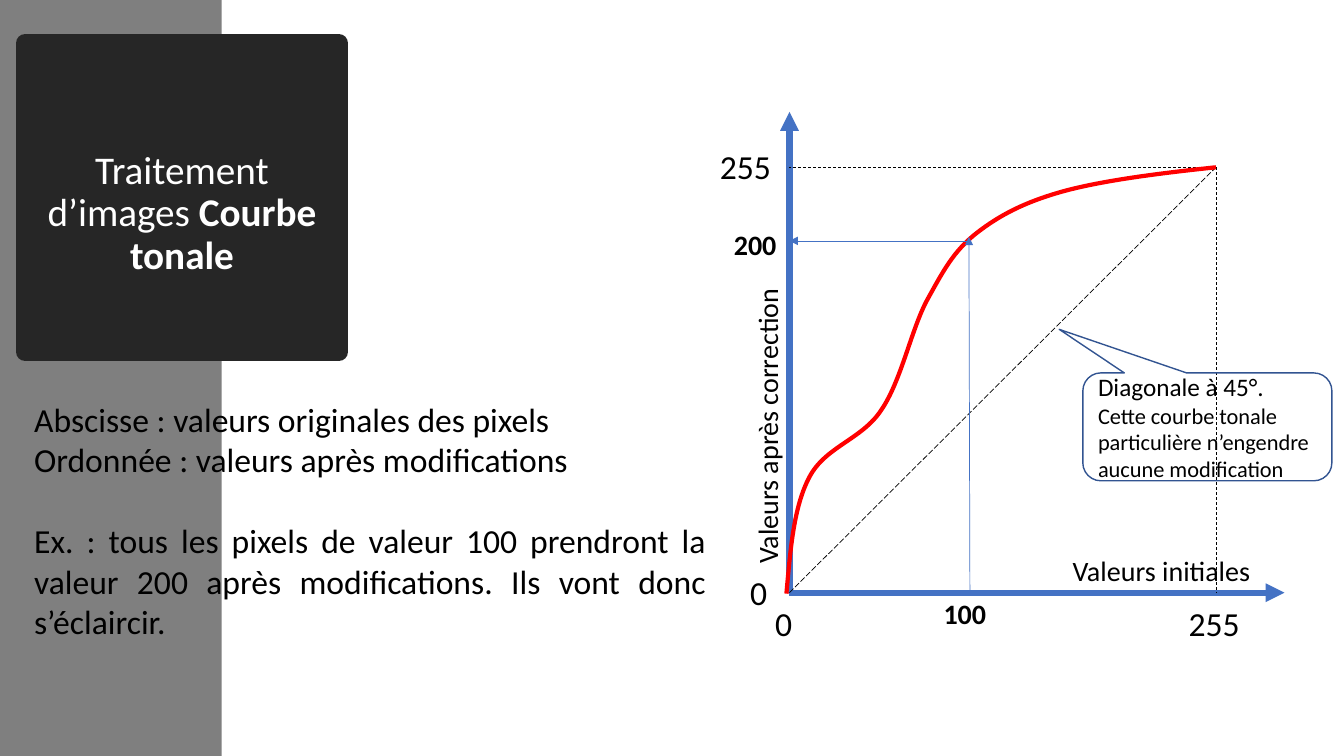
from pptx import Presentation
from pptx.util import Inches, Pt
from pptx.dml.color import RGBColor
from pptx.enum.dml import MSO_LINE as Dash
from pptx.enum.shapes import MSO_SHAPE as Shape, MSO_CONNECTOR as Link
from pptx.enum.text import PP_ALIGN as Align, MSO_ANCHOR as Anchor, MSO_AUTO_SIZE as Fit
from pptx.oxml.ns import qn
from lxml.etree import SubElement

BLACK = RGBColor(0, 0, 0)
WHITE = RGBColor(255, 255, 255)
GREY = RGBColor(0x7F, 0x7F, 0x7F)
DARK = RGBColor(0x26, 0x26, 0x26)
BLUE = RGBColor(0x44, 0x72, 0xC4)
NAVY = RGBColor(0x32, 0x54, 0x91)
RED = RGBColor(255, 0, 0)
FONT = "Calibri"

# Content
TITLE = [("Traitement d’images ", False), ("Courbe tonale", True)]
BODY = [  # text, space before in points
    ("Abscisse : valeurs originales des pixels", 0),
    ("Ordonnée : valeurs après modifications", 0),
    ("Ex. : tous les pixels de valeur 100 prendront la valeur 200 après "
     "modifications. Ils vont donc s’éclaircir.", 29),
]
NOTE = [("Diagonale à 45°.", 18),
        ("Cette courbe tonale particulière n’engendre aucune modification", 16)]
LABELS = [  # text, left, top, width, height, size, bold, rotation
    ("0", 7.59, 5.93, 0.48, 0.5, 24, False, 0),
    ("0", 7.34, 5.62, 0.48, 0.5, 24, False, 0),
    ("255", 11.69, 5.93, 0.72, 0.5, 24, False, 0),
    ("255", 7.04, 1.4, 0.72, 0.5, 24, False, 0),
    ("Valeurs initiales", 10.54, 5.44, 2.05, 0.44, 20, False, 0),
    ("Valeurs après correction", 6.08, 3.94, 3.06, 0.44, 20, False, 270),
    ("100", 9.26, 5.87, 0.72, 0.44, 20, True, 0),
    ("200", 7.18, 2.21, 0.72, 0.44, 20, True, 0),
]
X0, Y0 = 7.83, 5.88    # value 0
X1, Y1 = 12.06, 1.66   # value 255
AXES = [  # start, end, colour, width, dash, arrow
    ((X0, Y0), (X0, 1.11), BLUE, 4.5, None, True),
    ((X0, Y0), (12.74, Y0), BLUE, 4.5, None, True),
    ((X0, Y0), (X1, Y1), BLACK, 0.5, Dash.LONG_DASH, False),
    ((X1, Y1), (X1, Y0), BLACK, 0.5, Dash.DASH, False),
    ((X1, Y1), (X0, Y1), BLACK, 0.5, Dash.DASH, False),
]
GUIDES = [
    ((9.62, 5.87), (9.61, 2.35), BLUE, 0.5, None, True),
    ((9.59, 2.39), (X0, 2.39), BLUE, 0.5, None, True),
]
CURVE = [  # start, then two handles and an end for each bend
    (7.8, 5.89),
    (7.84, 5.46), (7.87, 5.03), (8.03, 4.73),
    (8.19, 4.43), (8.55, 4.36), (8.74, 4.07),
    (8.94, 3.78), (9.04, 3.26), (9.2, 2.97),
    (9.36, 2.68), (9.46, 2.49), (9.69, 2.31),
    (9.91, 2.14), (10.15, 2.01), (10.54, 1.9),
    (10.94, 1.79), (11.5, 1.72), (X1, Y1),
]


def add_run(para, text, size, color=BLACK, bold=False):
    run = para.add_run()
    run.text = text
    font = run.font
    font.name, font.size, font.bold = FONT, Pt(size), bold
    font.color.rgb = color


def add_para(frame, index):
    return frame.add_paragraph() if index else frame.paragraphs[0]


def add_box(left, top, width, height):
    box = slide.shapes.add_textbox(*map(Inches, (left, top, width, height)))
    box.text_frame.word_wrap = True
    return box


def add_line(shapes, start, end, color, width, dash, arrow):
    line = shapes.add_connector(Link.STRAIGHT, *map(Inches, start + end))
    line.line.color.rgb = color
    line.line.width = Pt(width)
    if dash:
        line.line.dash_style = dash
    props = line._element.spPr
    if arrow:
        SubElement(props.find(qn("a:ln")), qn("a:tailEnd"), type="triangle")
    SubElement(props, qn("a:effectLst"))


def add_curve(points, color, width):
    emu = [(Inches(x), Inches(y)) for x, y in points]
    build = slide.shapes.build_freeform(*emu[0])
    build.add_line_segments(emu[1:], close=False)
    curve = build.convert_to_shape()
    # Each three segments become one bend
    path = curve._element.spPr.find(".//" + qn("a:path"))
    steps = path.findall(qn("a:lnTo"))
    for i in range(0, len(steps), 3):
        bend = SubElement(path, qn("a:cubicBezTo"))
        for step in steps[i:i + 3]:
            bend.append(step[0])
            path.remove(step)
    curve.fill.background()
    curve.line.color.rgb = color
    curve.line.width = Pt(width)
    curve.shadow.inherit = False


deck = Presentation()
deck.slide_width, deck.slide_height = Inches(13.33), Inches(7.5)
slide = deck.slides.add_slide(deck.slide_layouts[5])

# Side band, behind the title
band = slide.shapes.add_shape(Shape.RECTANGLE, 0, 0, Inches(2.2), Inches(7.5))
band.fill.solid()
band.fill.fore_color.rgb = GREY
band.line.fill.background()
band.shadow.inherit = False
title = slide.shapes.title
title._element.addprevious(band._element)

# Title
title.left, title.top = Inches(0.25), Inches(0.43)
title.width, title.height = Inches(3.11), Inches(3.06)
title.fill.solid()
title.fill.fore_color.rgb = DARK
title.line.color.rgb = DARK
title.line.width = Pt(13.75)
SubElement(title.line._get_or_add_ln(), qn("a:round"))
frame = title.text_frame
frame.auto_size, frame.word_wrap = Fit.NONE, True
frame.vertical_anchor = Anchor.MIDDLE
frame.margin_top = Inches(0.38)
para = frame.paragraphs[0]
para.alignment, para.line_spacing = Align.CENTER, 0.9
for text, bold in TITLE:
    add_run(para, text, 28, WHITE, bold)

# Axes, diagonal and limits
group = slide.shapes.add_group_shape()
for axis in AXES:
    add_line(group.shapes, *axis)

# Graph labels
for text, left, top, width, height, size, bold, turn in LABELS:
    box = add_box(left, top, width, height)
    box.rotation = turn
    para = box.text_frame.paragraphs[0]
    para.alignment = Align.JUSTIFY
    add_run(para, text, size, bold=bold)

# Explanation
frame = add_box(0.24, 3.91, 6.86, 2.93).text_frame
for i, (text, gap) in enumerate(BODY):
    para = add_para(frame, i)
    para.alignment = Align.JUSTIFY
    if gap:
        para.space_before = Pt(gap)
    add_run(para, text, 24)

# Callout on the diagonal
note = slide.shapes.add_shape(Shape.ROUNDED_RECTANGULAR_CALLOUT,
                              *map(Inches, (10.74, 3.7, 2.47, 1.07)))
for i, value in enumerate((-0.595, -0.904, 0.167)):
    note.adjustments[i] = value
note.fill.background()
note.line.color.rgb = NAVY
note.line.width = Pt(1)
note.shadow.inherit = False
frame = note.text_frame
frame.word_wrap, frame.vertical_anchor = True, Anchor.MIDDLE
for i, (text, size) in enumerate(NOTE):
    para = add_para(frame, i)
    para.alignment = Align.LEFT
    add_run(para, text, size)

# Tone curve and reading guides
add_curve(CURVE, RED, 3)
for guide in GUIDES:
    add_line(slide.shapes, *guide)

deck.save("out.pptx")
